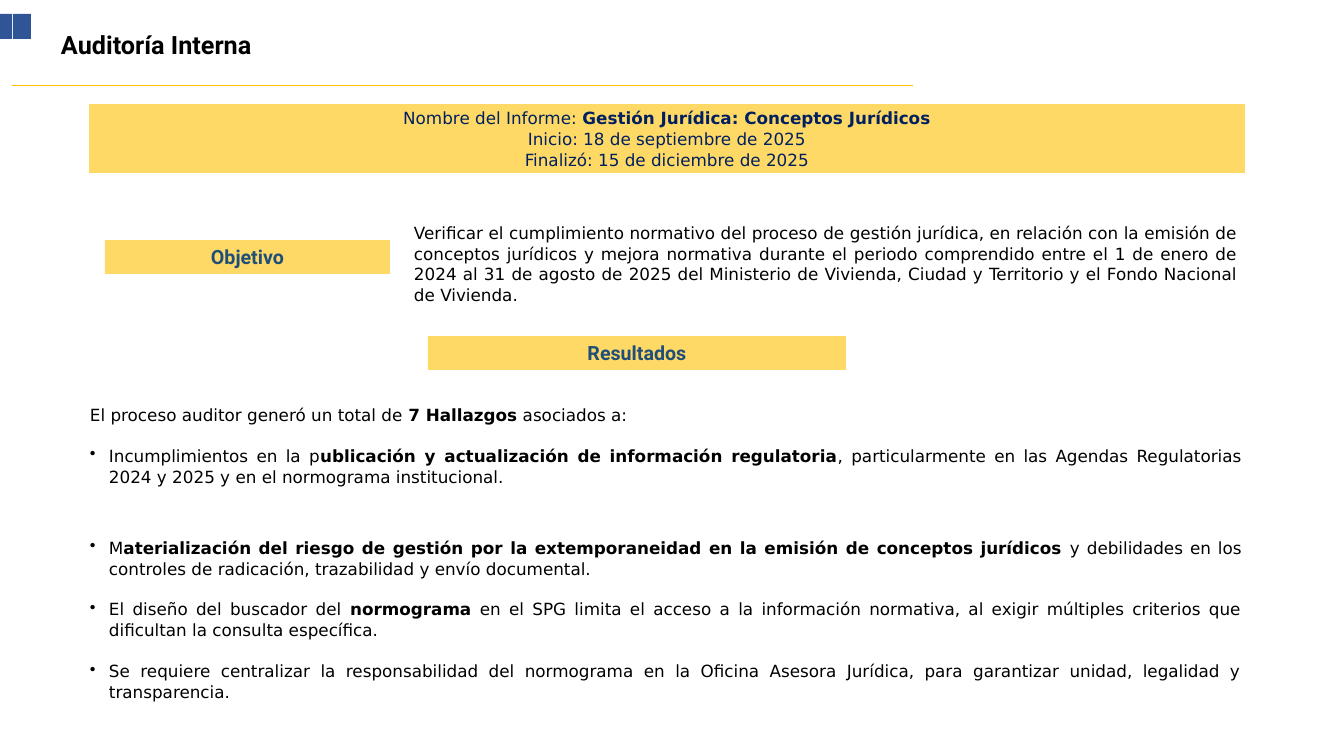
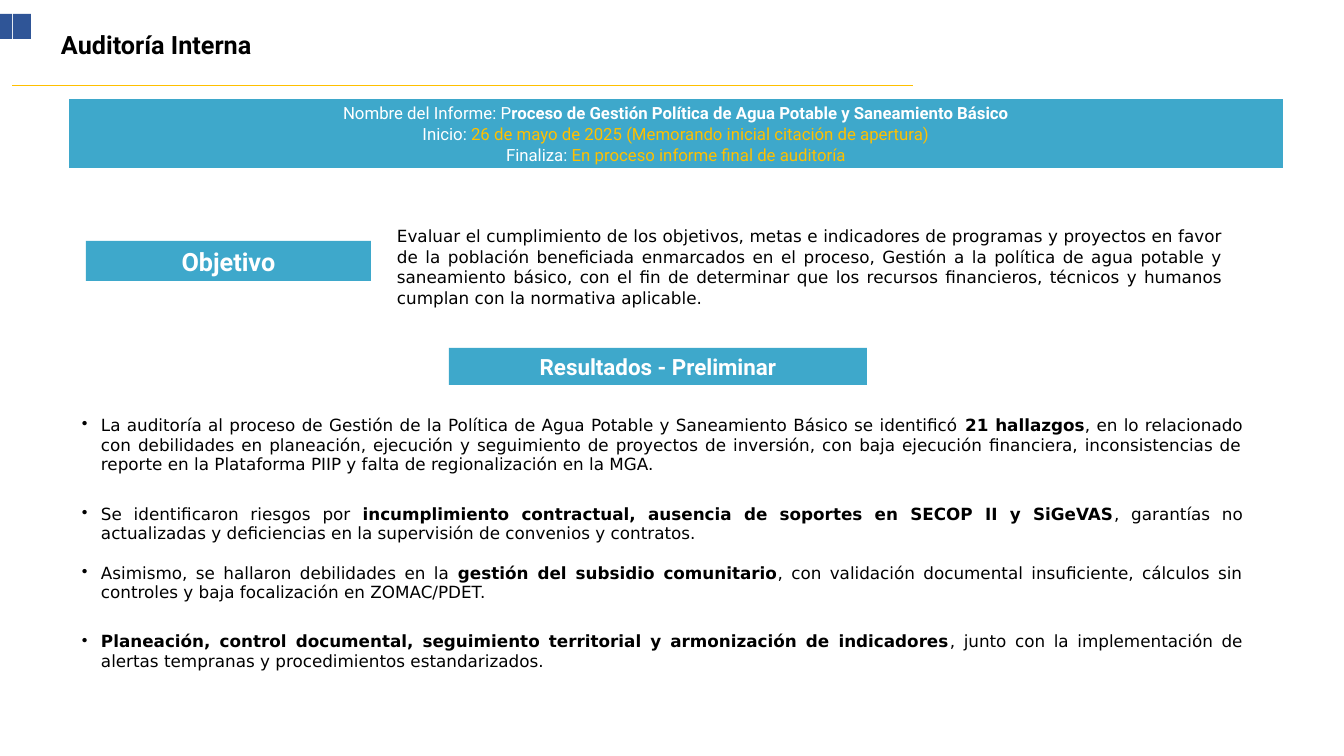
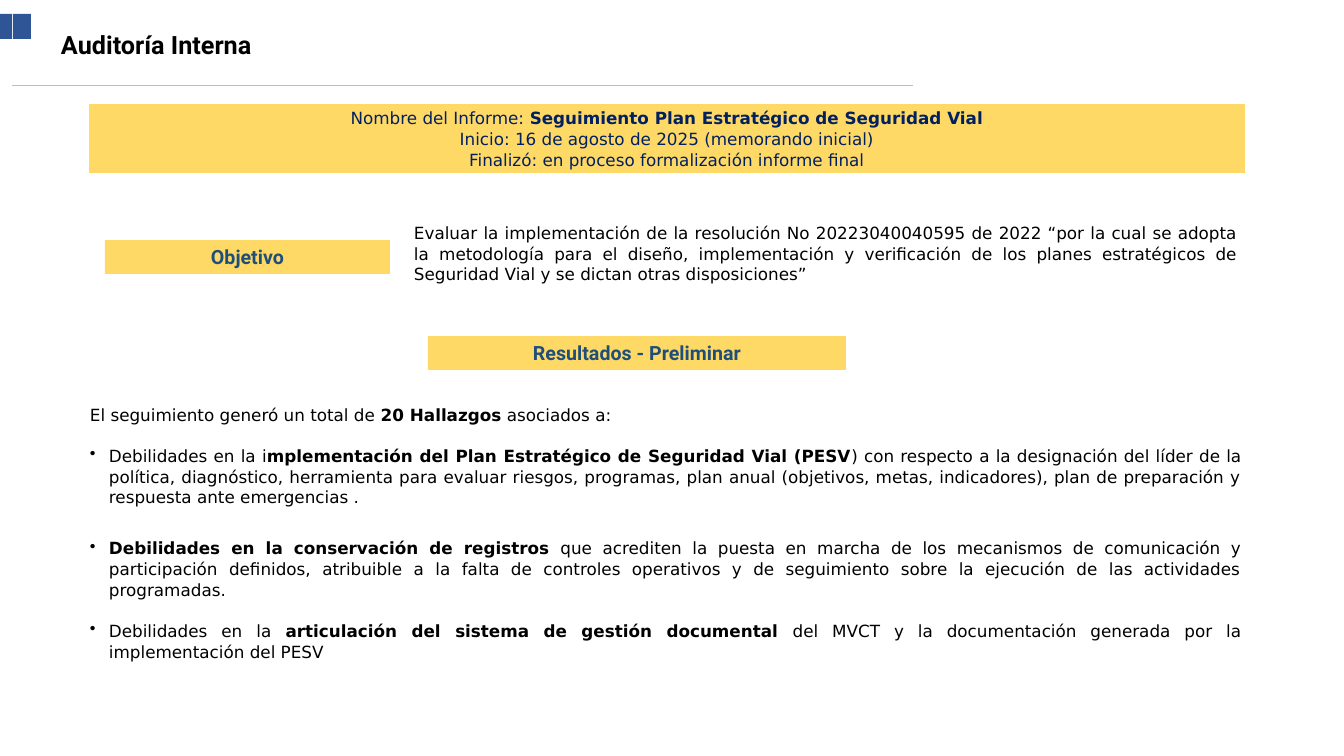
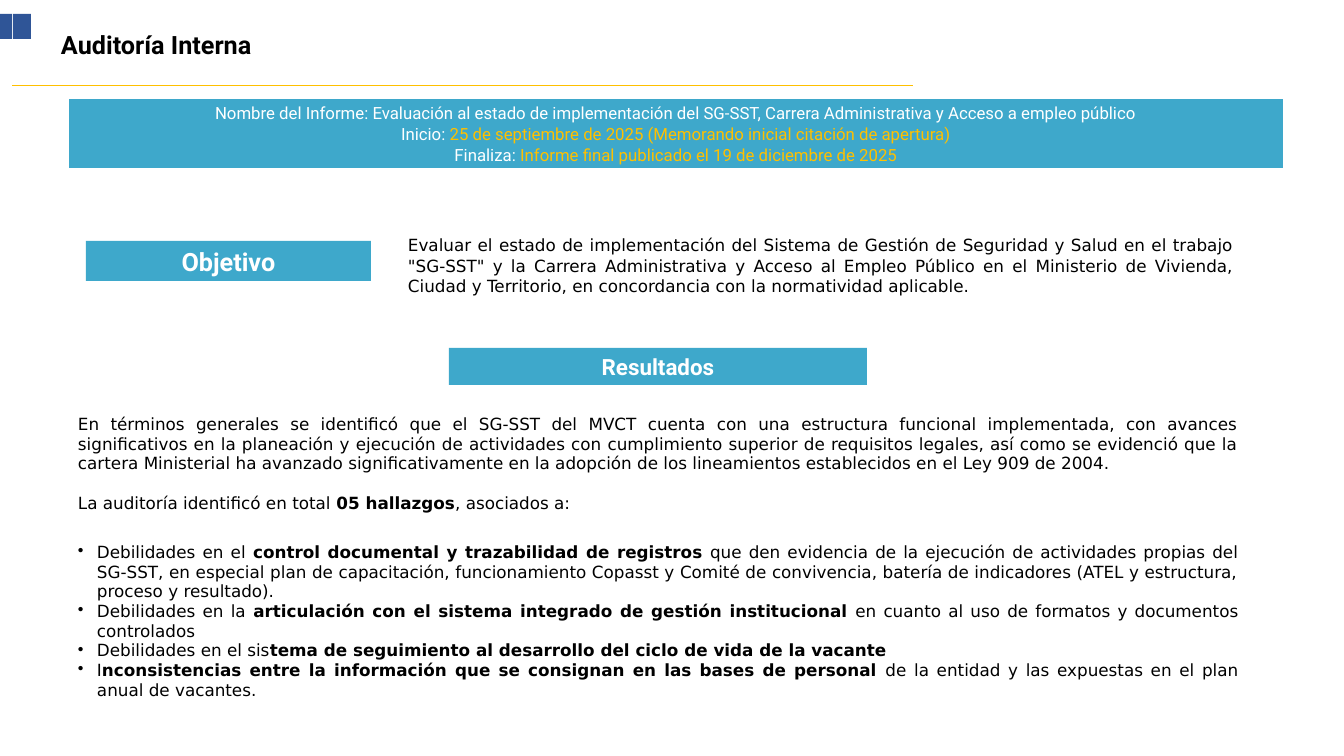
import dataclasses

import lxml.etree
import pptx
import pptx.dml.color
import pptx.enum.shapes
import pptx.enum.text
import pptx.oxml.ns
import pptx.util

EMU_PER_PX = 914400 / 100.8
ALIGN = pptx.enum.text.PP_ALIGN
ANCHOR = pptx.enum.text.MSO_ANCHOR
RECTANGLE = pptx.enum.shapes.MSO_SHAPE.RECTANGLE


@dataclasses.dataclass(frozen=True)
class Theme:
    heading_font: str = "Roboto"
    body_font: str = "DejaVu Sans"
    ink: str = "000000"
    rule: str = "FFC000"
    corner: str = "2F5597"
    title_size: int = 18
    body_size: int = 12
    line_gap: int = 14
    wide_gap: int = 21
    loose: float = 1.03
    tight: float = 1.0
    hanging: int = 19


THEME = Theme()


@dataclasses.dataclass(frozen=True)
class Look:
    fill: str
    label_color: str
    band_font: str
    band_color: str
    accent: str
    objective_size: int
    results_size: int
    band_at: tuple
    objective_at: tuple
    results_at: tuple


YELLOW = Look(
    fill="FFD966", label_color="1F4E79",
    band_font=THEME.body_font, band_color="002060", accent="002060",
    objective_size=14, results_size=14,
    band_at=(89, 104, 1156, 69), objective_at=(105, 240, 285, 34),
    results_at=(428, 336, 418, 34),
)
BLUE = Look(
    fill="3EA8CB", label_color="FFFFFF",
    band_font=THEME.heading_font, band_color="FFFFFF", accent="FFC000",
    objective_size=18, results_size=16,
    band_at=(69, 99, 1214, 69), objective_at=(86, 241, 285, 40),
    results_at=(449, 348, 418, 37),
)


def px(length):
    return pptx.util.Emu(round(length * EMU_PER_PX))


def rgb(value):
    return pptx.dml.color.RGBColor.from_string(value)


def write(para, text, *, font=THEME.body_font, size=THEME.body_size,
          color=THEME.ink, bold=False, accent=None, align=ALIGN.JUSTIFY,
          spacing=THEME.loose, gap=0, bullet=False):
    """Segments between asterisks take the accent colour, or bold without one."""
    para.alignment = align
    para.line_spacing = spacing
    para.space_before = pptx.util.Pt(gap * spacing)
    if bullet:
        properties = para._p.get_or_add_pPr()
        properties.set("marL", str(px(THEME.hanging)))
        properties.set("indent", str(-px(THEME.hanging)))
        lxml.etree.SubElement(properties, pptx.oxml.ns.qn("a:buChar"), char="•")
    for index, part in enumerate(text.split("*")):
        if not part:
            continue
        marked = index % 2 == 1
        span = para.add_run()
        span.text = part
        span.font.name = font
        span.font.size = pptx.util.Pt(size)
        span.font.bold = bold or (marked and accent is None)
        span.font.color.rgb = rgb(accent if marked and accent else color)


class ReportDeck:
    def __init__(self):
        self.deck = pptx.Presentation()
        self.deck.slide_width = px(1344)
        self.deck.slide_height = px(756)
        self.slide = None
        self.look = None

    def page(self, title, look):
        self.look = look
        self.slide = self.deck.slides.add_slide(self.deck.slide_layouts[5])
        self.rule(913, 12, 85)
        self.block((13, 14, 18, 25), THEME.corner)
        self.block((0, 14, 12, 25), THEME.corner)
        box = self.slide.shapes.title
        box.left, box.top, box.width, box.height = map(px, (54, 25, 450, 38))
        frame = self.frame(box, inset=(7, 4))
        write(frame.paragraphs[0], title, font=THEME.heading_font,
              size=THEME.title_size, bold=True, align=ALIGN.LEFT,
              spacing=THEME.tight)

    def rule(self, start, end, y):
        line = self.slide.shapes.add_connector(
            pptx.enum.shapes.MSO_CONNECTOR.STRAIGHT,
            px(start), px(y), px(end), px(y))
        line.line.color.rgb = rgb(THEME.rule)
        line.line.width = pptx.util.Pt(0.5)
        lxml.etree.SubElement(line._element.spPr, pptx.oxml.ns.qn("a:effectLst"))

    def block(self, at, fill):
        shape = self.slide.shapes.add_shape(RECTANGLE, *map(px, at))
        shape.shadow.inherit = False
        shape.fill.solid()
        shape.fill.fore_color.rgb = rgb(fill)
        shape.line.fill.background()
        return shape

    def frame(self, box, inset=(10, 5), anchor=ANCHOR.TOP):
        frame = box.text_frame
        frame.word_wrap = True
        frame.auto_size = pptx.enum.text.MSO_AUTO_SIZE.NONE
        frame.vertical_anchor = anchor
        frame.margin_left = frame.margin_right = px(inset[0])
        frame.margin_top = frame.margin_bottom = px(inset[1])
        return frame

    def band(self, *lines):
        look = self.look
        box = self.block(look.band_at, look.fill)
        frame = self.frame(box, inset=(7, 4), anchor=ANCHOR.MIDDLE)
        for index, line in enumerate(lines):
            para = frame.add_paragraph() if index else frame.paragraphs[0]
            write(para, line, font=look.band_font, color=look.band_color,
                  accent=look.accent if index else None, align=ALIGN.CENTER)

    def label(self, at, text, size):
        frame = self.frame(self.block(at, self.look.fill), anchor=ANCHOR.MIDDLE)
        write(frame.paragraphs[0], text, font=THEME.heading_font, size=size,
              color=self.look.label_color, bold=True, align=ALIGN.CENTER,
              spacing=THEME.tight)

    def objective(self, at, text):
        self.label(self.look.objective_at, "Objetivo", self.look.objective_size)
        box = self.slide.shapes.add_textbox(*map(px, at))
        write(self.frame(box).paragraphs[0], text)

    def results(self, text):
        self.label(self.look.results_at, text, self.look.results_size)

    def fill_findings(self, frame, findings, spacing):
        for index, (gap, bullet, text) in enumerate(findings):
            para = frame.add_paragraph() if index else frame.paragraphs[0]
            write(para, text, gap=gap, bullet=bullet, spacing=spacing)

    def findings_box(self, at, *findings):
        box = self.slide.shapes.add_textbox(*map(px, at))
        frame = self.frame(box, inset=(7, 4))
        self.fill_findings(frame, findings, THEME.loose)

    def findings_table(self, at, *findings):
        table = self.slide.shapes.add_table(1, 1, *map(px, at)).table
        table.first_row = False
        table.horz_banding = False
        cell = table.cell(0, 0)
        cell.fill.background()
        cell.margin_left = cell.margin_right = cell.margin_top = px(1)
        cell.margin_bottom = px(5)
        self.fill_findings(cell.text_frame, findings, THEME.tight)


def main():
    report = ReportDeck()
    title = "Auditoría Interna"
    line, wide = THEME.line_gap, THEME.wide_gap

    report.page(title, YELLOW)
    report.band(
        "Nombre del Informe: *Gestión Jurídica: Conceptos Jurídicos*",
        "Inicio: 18 de septiembre de 2025",
        "Finalizó: 15 de diciembre de 2025")
    report.objective(
        (404, 217, 844, 92),
        "Verificar el cumplimiento normativo del proceso de gestión jurídica, en relación "
        "con la emisión de conceptos jurídicos y mejora normativa durante el periodo "
        "comprendido entre el 1 de enero de 2024 al 31 de agosto de 2025 del Ministerio de "
        "Vivienda, Ciudad y Territorio y el Fondo Nacional de Vivienda.")
    report.results("Resultados")
    report.findings_box(
        (83, 400, 1166, 302),
        (0, False, "El proceso auditor generó un total de *7 Hallazgos* asociados a:"),
        (line, True,
         "Incumplimientos en la p*ublicación y actualización de información regulatoria*, "
         "particularmente en las Agendas Regulatorias 2024 y 2025 y en el normograma "
         "institucional."),
        (line + wide, True,
         "M*aterialización del riesgo de gestión por la extemporaneidad en la emisión de "
         "conceptos jurídicos* y debilidades en los controles de radicación, trazabilidad y "
         "envío documental."),
        (line, True,
         "El diseño del buscador del *normograma* en el SPG limita el acceso a la "
         "información normativa, al exigir múltiples criterios que dificultan la consulta "
         "específica."),
        (line, True,
         "Se requiere centralizar la responsabilidad del normograma en la Oficina Asesora "
         "Jurídica, para garantizar unidad, legalidad y transparencia."))

    report.page(title, BLUE)
    report.band(
        "Nombre del Informe: P*roceso de Gestión Política de Agua Potable y Saneamiento "
        "Básico*",
        "Inicio:* 26 de mayo de 2025 (Memorando inicial citación de apertura)*",
        "Finaliza:* En proceso informe final de auditoría*")
    report.objective(
        (387, 220, 846, 92),
        "Evaluar el cumplimiento de los objetivos, metas e indicadores de programas y "
        "proyectos en favor de la población beneficiada enmarcados en el proceso, Gestión a "
        "la política de agua potable y saneamiento básico, con el fin de determinar que los "
        "recursos financieros, técnicos y humanos cumplan con la normativa aplicable.")
    report.results("Resultados - Preliminar")
    report.findings_table(
        (81, 415, 1163, 288),
        (0, True,
         "La auditoría al proceso de Gestión de la Política de Agua Potable y Saneamiento "
         "Básico se identificó *21 hallazgos*, en lo relacionado con debilidades en "
         "planeación, ejecución y seguimiento de proyectos de inversión, con baja ejecución "
         "financiera, inconsistencias de reporte en la Plataforma PIIP y falta de "
         "regionalización en la MGA."),
        (wide, True,
         "Se identificaron riesgos por *incumplimiento contractual, ausencia de soportes en "
         "SECOP II y SiGeVAS*, garantías no actualizadas y deficiencias en la supervisión "
         "de convenios y contratos."),
        (line, True,
         "Asimismo, se hallaron debilidades en la *gestión del subsidio comunitario*, con "
         "validación documental insuficiente, cálculos sin controles y baja focalización en "
         "ZOMAC/PDET."),
        (wide, True,
         "*Planeación, control documental, seguimiento territorial y armonización de "
         "indicadores*, junto con la implementación de alertas tempranas y procedimientos "
         "estandarizados."))

    report.page(title, YELLOW)
    report.band(
        "Nombre del Informe: *Seguimiento Plan Estratégico de Seguridad Vial*",
        "Inicio: 16 de agosto de 2025 (memorando inicial)",
        "Finalizó: en proceso formalización informe final")
    report.objective(
        (404, 217, 844, 72),
        "Evaluar la implementación de la resolución No 20223040040595 de 2022 “por la cual "
        "se adopta la metodología para el diseño, implementación y verificación de los "
        "planes estratégicos de Seguridad Vial y se dictan otras disposiciones”")
    report.results("Resultados - Preliminar")
    report.findings_box(
        (83, 400, 1166, 282),
        (0, False, "El seguimiento generó un total de *20 Hallazgos* asociados a:"),
        (line, True,
         "Debilidades en la i*mplementación del Plan Estratégico de Seguridad Vial (PESV*) "
         "con respecto a la designación del líder de la política, diagnóstico, herramienta "
         "para evaluar riesgos, programas, plan anual (objetivos, metas, indicadores), plan "
         "de preparación y respuesta ante emergencias ."),
        (wide, True,
         "*Debilidades en la conservación de registros* que acrediten la puesta en marcha "
         "de los mecanismos de comunicación y participación definidos, atribuible a la "
         "falta de controles operativos y de seguimiento sobre la ejecución de las "
         "actividades programadas."),
        (line, True,
         "Debilidades en la *articulación del sistema de gestión documental* del MVCT y la "
         "documentación generada por la implementación del PESV"))

    report.page(title, BLUE)
    report.band(
        "Nombre del Informe: Evaluación al estado de implementación del SG-SST, Carrera "
        "Administrativa y Acceso a empleo público",
        "Inicio:* 25 de septiembre de 2025 (Memorando inicial citación de apertura)*",
        "Finaliza:* Informe final publicado el 19 de diciembre de 2025*")
    report.objective(
        (398, 229, 846, 72),
        "Evaluar el estado de implementación del Sistema de Gestión de Seguridad y Salud en "
        'el trabajo "SG-SST" y la Carrera Administrativa y Acceso al Empleo Público en el '
        "Ministerio de Vivienda, Ciudad y Territorio, en concordancia con la normatividad "
        "aplicable.")
    report.results("Resultados")
    report.findings_table(
        (77, 414, 1163, 298),
        (0, False,
         "En términos generales se identificó que el SG-SST del MVCT cuenta con una "
         "estructura funcional implementada, con avances significativos en la planeación y "
         "ejecución de actividades con cumplimiento superior de requisitos legales, así "
         "como se evidenció que la cartera Ministerial ha avanzado significativamente en la "
         "adopción de los lineamientos establecidos en el Ley 909 de 2004."),
        (line, False, "La auditoría identificó en total *05 hallazgos*, asociados a:"),
        (wide, True,
         "Debilidades en el *control documental y trazabilidad de registros* que den "
         "evidencia de la ejecución de actividades propias del SG-SST, en especial plan de "
         "capacitación, funcionamiento Copasst y Comité de convivencia, batería de "
         "indicadores (ATEL y estructura, proceso y resultado)."),
        (0, True,
         "Debilidades en la *articulación con el sistema integrado de gestión "
         "institucional* en cuanto al uso de formatos y documentos controlados"),
        (0, True,
         "Debilidades en el sis*tema de seguimiento al desarrollo del ciclo de vida de la "
         "vacante*"),
        (0, True,
         "I*nconsistencias entre la información que se consignan en las bases de personal* "
         "de la entidad y las expuestas en el plan anual de vacantes."))

    report.deck.save("out.pptx")


if __name__ == "__main__":
    main()
